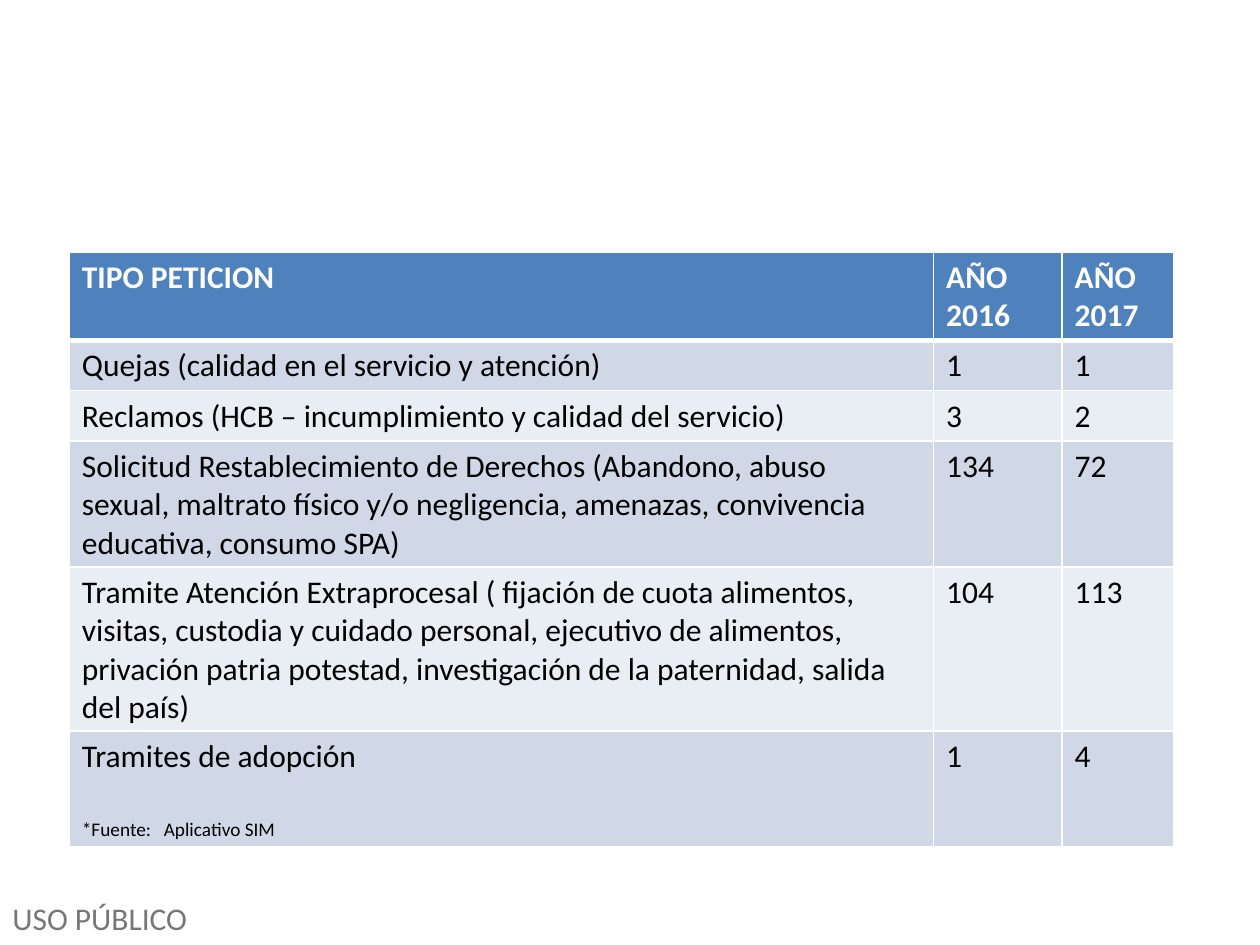
from dataclasses import dataclass

from lxml import etree
from pptx import Presentation
from pptx import util as u
from pptx.dml.color import RGBColor
from pptx.oxml.ns import qn


@dataclass(frozen=True)
class Theme:
    font: str = "Calibri"
    head_fill: str = "4F81BD"
    bands: tuple = ("D0D8E8", "E9EDF4")
    white: str = "FFFFFF"
    ink: str = "000000"
    muted: str = "777777"
    body: int = 18
    note: int = 11
    rule: int = 1
    head_rule: int = 3


T = Theme()
COLS = (6.86, 1.02, 0.89)
ROW_HEIGHTS = (0.69, 0.4, 0.4, 1.0, 1.3, 0.91)
ROWS = (
    ("TIPO PETICION", "AÑO 2016", "AÑO 2017"),
    ("Quejas (calidad en el servicio y atención)", "1", "1"),
    ("Reclamos (HCB – incumplimiento y calidad del servicio)", "3", "2"),
    ("Solicitud Restablecimiento de Derechos (Abandono, abuso sexual, "
     "maltrato físico y/o negligencia, amenazas, convivencia educativa, "
     "consumo SPA)", "134", "72"),
    ("Tramite Atención Extraprocesal ( fijación de cuota alimentos, visitas, "
     "custodia y cuidado personal, ejecutivo de alimentos, privación patria "
     "potestad, investigación de la paternidad, salida del país)",
     "104", "113"),
    ("Tramites de adopción", "1", "4"),
)
SOURCE_NOTE = "*Fuente:\tAplicativo SIM"


def write(p, content, color, size=T.body, bold=False):
    p.text = content
    for r in p.runs:
        r.font.name = T.font
        r.font.size = u.Pt(size)
        r.font.bold = bold
        r.font.color.rgb = RGBColor.from_string(color)


def set_borders(cell, bottom):
    tc_pr = cell._tc.get_or_add_tcPr()
    for side in "LRTB":
        width = bottom if side == "B" else T.rule
        ln = etree.SubElement(tc_pr, qn(f"a:ln{side}"), w=str(u.Pt(width)))
        fill = etree.SubElement(ln, qn("a:solidFill"))
        etree.SubElement(fill, qn("a:srgbClr"), val=T.white)


def add_tab_stop(p, inches):
    tabs = etree.SubElement(p._p.get_or_add_pPr(), qn("a:tabLst"))
    etree.SubElement(tabs, qn("a:tab"), pos=str(u.Inches(inches)), algn="l")


def add_requests_table(s, left, top):
    frame = s.shapes.add_table(len(ROWS), len(COLS), left, top,
                               u.Inches(sum(COLS)), u.Inches(sum(ROW_HEIGHTS)))
    table = frame.table
    for column, width in zip(table.columns, COLS):
        column.width = u.Inches(width)
    for i, (values, height) in enumerate(zip(ROWS, ROW_HEIGHTS)):
        table.rows[i].height = u.Inches(height)
        head = i == 0
        for j, value in enumerate(values):
            cell = table.cell(i, j)
            # The rule under the header is shared with the first body row
            set_borders(cell, T.head_rule if head else T.rule)
            cell.fill.solid()
            cell.fill.fore_color.rgb = RGBColor.from_string(
                T.head_fill if head else T.bands[(i - 1) % 2])
            write(cell.text_frame.paragraphs[0], value,
                  T.white if head else T.ink, bold=head)
    return table


def add_source_note(cell):
    p = cell.text_frame.add_paragraph()
    p.space_before = u.Pt(24)
    add_tab_stop(p, 0.65)
    write(p, SOURCE_NOTE, T.ink, T.note)


def add_label(s, content, left, top, width, height):
    tf = s.shapes.add_textbox(left, top, width, height).text_frame
    tf.word_wrap = True
    write(tf.paragraphs[0], content, T.muted)


def main():
    prs = Presentation()
    prs.slide_width, prs.slide_height = u.Inches(10), u.Inches(7.5)
    w, h = prs.slide_width, prs.slide_height
    s = prs.slides.add_slide(prs.slide_layouts[6])

    # Classification label in the bottom corner
    add_label(s, "USO PÚBLICO", 0, int(h * 0.945), int(w * 0.183), u.Inches(0.4))

    # Requests by type and year, with the source in the last row
    table = add_requests_table(s, u.Inches(0.55), u.Inches(2))
    add_source_note(table.cell(len(ROWS) - 1, 0))

    prs.save("out.pptx")


if __name__ == "__main__":
    main()
